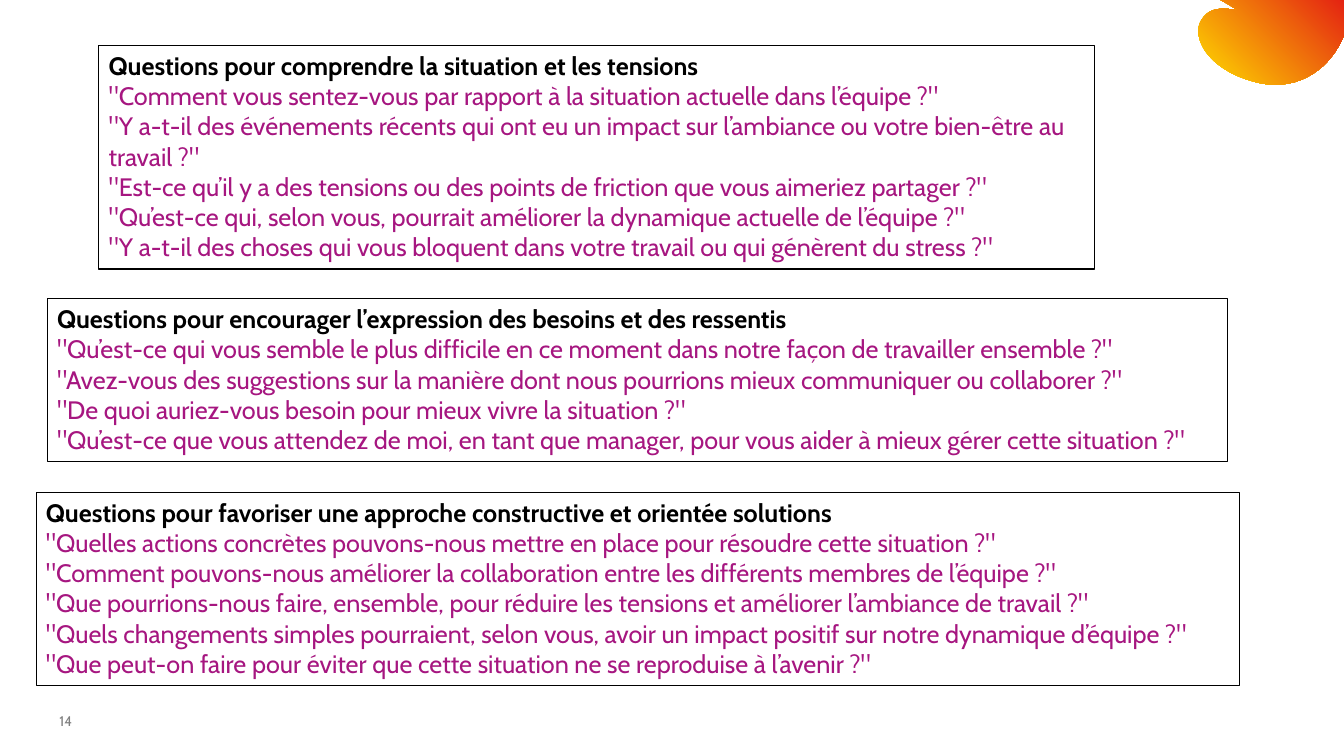
"""Build the slide of manager questions in three framed boxes."""
from dataclasses import dataclass

import pptx
import pptx.dml.color
import pptx.enum.text
import pptx.slide
import pptx.text.text
import pptx.util

Cm = pptx.util.Cm
Point = tuple[float, float]

FONT = "Cabin"
COLORS = {
    "black": "000000",
    "purple": "A61680",
    "grey": "808080",
    "yellow": "FFDD00",
    "red": "E42312",
}
STEPS = 16


@dataclass
class Box:
    """A framed group of questions under a bold heading, in centimetres."""

    left: float
    top: float
    width: float
    height: float
    head: str
    asks: list[str]
    wrap: bool = False


BOXES = [
    Box(2.49, 1.14, 25.1, 5.64,
        "Questions pour comprendre la situation et les tensions",
        ["Comment vous sentez-vous par rapport à la situation actuelle dans l’équipe ?",
         "Y a-t-il des événements récents qui ont eu un impact sur l’ambiance ou votre bien-être au travail ?",
         "Est-ce qu’il y a des tensions ou des points de friction que vous aimeriez partager ?",
         "Qu’est-ce qui, selon vous, pourrait améliorer la dynamique actuelle de l’équipe ?",
         "Y a-t-il des choses qui vous bloquent dans votre travail ou qui génèrent du stress ?"],
        wrap=True),
    Box(1.19, 7.52, 29.74, 4.11,
        "Questions pour encourager l’expression des besoins et des ressentis",
        ["Qu’est-ce qui vous semble le plus difficile en ce moment dans notre façon de travailler ensemble ?",
         "Avez-vous des suggestions sur la manière dont nous pourrions mieux communiquer ou collaborer ?",
         "De quoi auriez-vous besoin pour mieux vivre la situation ?",
         "Qu’est-ce que vous attendez de moi, en tant que manager, pour vous aider à mieux gérer cette situation ?"]),
    Box(0.91, 12.4, 30.33, 4.88,
        "Questions pour favoriser une approche constructive et orientée solutions",
        ["Quelles actions concrètes pouvons-nous mettre en place pour résoudre cette situation ?",
         "Comment pouvons-nous améliorer la collaboration entre les différents membres de l’équipe ?",
         "Que pourrions-nous faire, ensemble, pour réduire les tensions et améliorer l’ambiance de travail ?",
         "Quels changements simples pourraient, selon vous, avoir un impact positif sur notre dynamique d’équipe ?",
         "Que peut-on faire pour éviter que cette situation ne se reproduise à l’avenir ?"]),
]

START = (30.76, 0)
EDGE = [(33.87, 0), (33.87, 0.89), (33.81, 1.02)]
CURVES = [
    [(33.43, 1.83), (32.59, 2.34), (31.6, 2.06)],
    [(30.35, 1.73), (29.92, 0.79), (30.38, 0.38)],
    [(30.56, 0.2), (30.84, 0.18), (31.29, 0.28)],
    [(31.19, 0.25), (31.09, 0.2), (30.99, 0.13)],
]


def color(name: str) -> pptx.dml.color.RGBColor:
    """Return the named colour."""
    return pptx.dml.color.RGBColor.from_string(COLORS[name])


def write(par: pptx.text.text._Paragraph, text: str, *, size: float = 18,
          tint: str = "black", bold: bool = False) -> None:
    """Add formatted text to a paragraph."""
    run = par.add_run()
    run.text = text
    run.font.name = FONT
    run.font.size = pptx.util.Pt(size)
    run.font.bold = bold
    run.font.color.rgb = color(tint)


def bend(start: Point, curve: list[Point]) -> list[Point]:
    """Sample a cubic curve after its start point."""
    spots = [start, *curve]
    points = []
    for step in range(1, STEPS + 1):
        t = step / STEPS
        parts = [(1 - t) ** 3, 3 * t * (1 - t) ** 2, 3 * t ** 2 * (1 - t), t ** 3]
        points.append((sum(w * x for w, (x, _) in zip(parts, spots)),
                       sum(w * y for w, (_, y) in zip(parts, spots))))
    return points


def draw_blob(slide: pptx.slide.Slide) -> None:
    """Draw the gradient blob in the top right corner."""
    points = list(EDGE)
    for curve in CURVES:
        points += bend(points[-1], curve)
    pen = slide.shapes.build_freeform(Cm(START[0]), Cm(START[1]))
    pen.add_line_segments([(Cm(x), Cm(y)) for x, y in points], close=True)
    blob = pen.convert_to_shape()
    blob.shadow.inherit = False
    blob.line.fill.background()
    blob.fill.gradient()
    blob.fill.gradient_angle = 45
    for stop, place, name in zip(blob.fill.gradient_stops, (0, 1), ("yellow", "red")):
        stop.position = place
        stop.color.rgb = color(name)


def draw_box(slide: pptx.slide.Slide, box: Box) -> None:
    """Draw one framed box of questions."""
    shape = slide.shapes.add_textbox(Cm(box.left), Cm(box.top), Cm(box.width), Cm(box.height))
    shape.line.color.rgb = color("black")
    shape.line.width = pptx.util.Pt(0.75)
    frame = shape.text_frame
    frame.word_wrap = box.wrap
    frame.auto_size = pptx.enum.text.MSO_AUTO_SIZE.SHAPE_TO_FIT_TEXT
    write(frame.paragraphs[0], box.head, bold=True)
    for ask in box.asks:
        write(frame.add_paragraph(), f'"{ask}"', tint="purple")


def draw_page(slide: pptx.slide.Slide, text: str) -> None:
    """Draw the page number at the bottom left."""
    frame = slide.shapes.add_textbox(Cm(1.5), Cm(18.01), Cm(2), Cm(0.36)).text_frame
    frame.word_wrap = True
    frame.margin_left = frame.margin_right = frame.margin_top = frame.margin_bottom = 0
    frame.vertical_anchor = pptx.enum.text.MSO_ANCHOR.BOTTOM
    write(frame.paragraphs[0], text, size=10, tint="grey")


def main() -> None:
    """Build and save the deck."""
    deck = pptx.Presentation()
    deck.slide_width, deck.slide_height = Cm(33.87), Cm(19.05)
    slide = deck.slides.add_slide(deck.slide_layouts.get_by_name("Blank"))
    draw_blob(slide)
    draw_page(slide, "14")
    for box in BOXES:
        draw_box(slide, box)
    deck.save("out.pptx")


if __name__ == "__main__":
    main()
